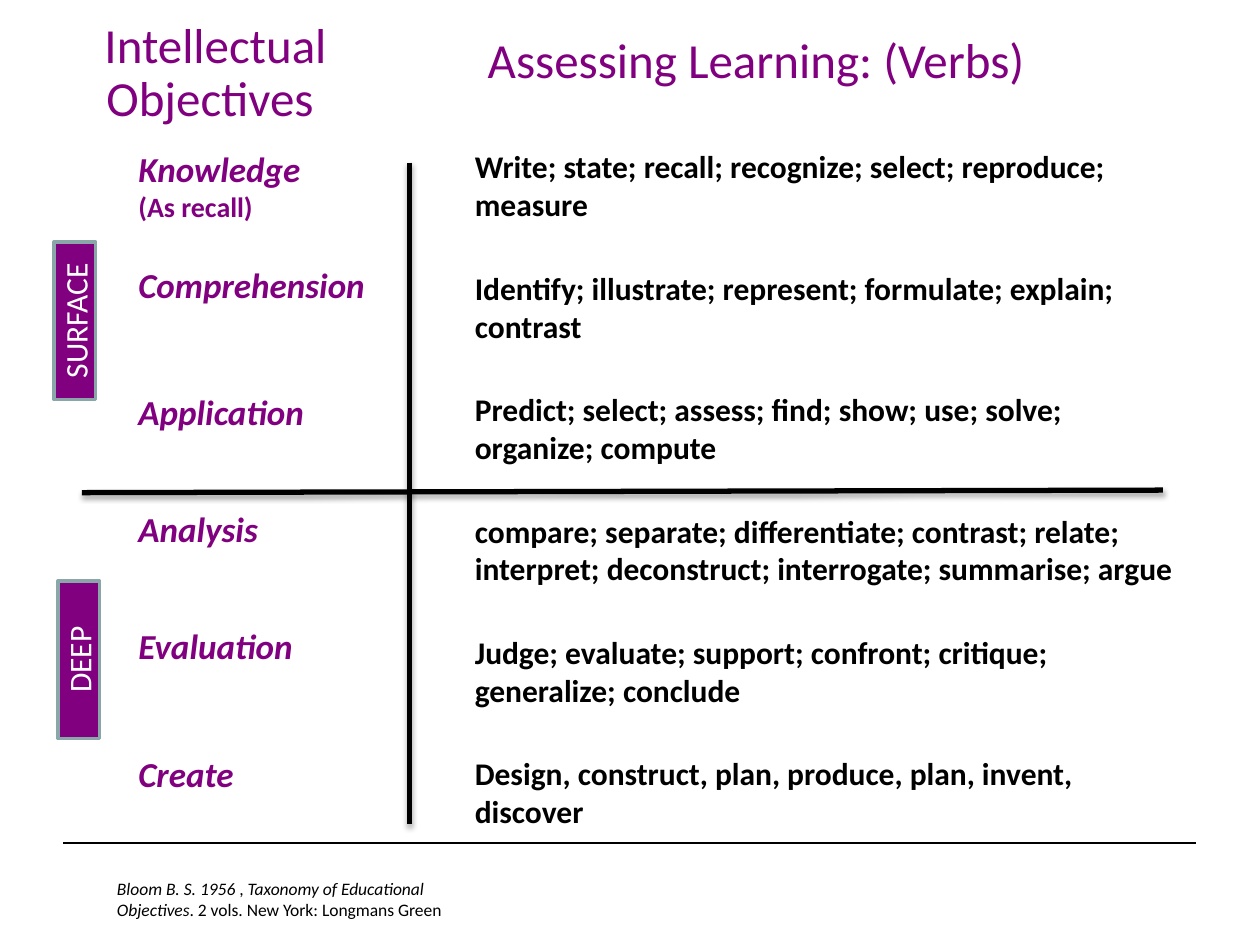
from dataclasses import dataclass

from lxml.etree import SubElement
from pptx import Presentation
from pptx.dml.color import RGBColor
from pptx.enum.shapes import MSO_CONNECTOR as Connector, MSO_SHAPE as Shape
from pptx.enum.text import MSO_ANCHOR as Anchor, PP_ALIGN as Align
from pptx.oxml.ns import qn
from pptx.util import Inches, Pt


@dataclass(frozen=True)
class Theme:
    font: str = "Calibri"
    purple: str = "800080"
    black: str = "000000"
    white: str = "FFFFFF"
    badge_edge: str = "8AA6A8"
    heading: int = 28
    objective: int = 20
    verb: int = 18
    note: int = 16
    citation: int = 10


THEME = Theme()

# Content: headings with (left, top, width, height)
HEADINGS = [
    ("Assessing Learning: (Verbs)", (3.75, 0, 4.5, 1)),
    ("Intellectual Objectives ", (0.67, 0.05, 2.08, 1.07)),
]
# Each objective: name, note, space before in points
OBJECTIVES = [
    ("Knowledge", "(As recall)", 0),
    ("Comprehension", None, 22.9),
    ("Application", None, 48.7),
    ("Analysis", None, 43),
    ("Evaluation", None, 43),
    ("Create", None, 48.7),
]
VERBS = [
    "Write; state; recall; recognize; select; reproduce; measure",
    "Identify; illustrate; represent; formulate; explain; contrast",
    "Predict; select; assess; find; show; use; solve; organize; compute",
    "compare; separate; differentiate; contrast; relate; interpret; "
    "deconstruct; interrogate; summarise; argue",
    "Judge; evaluate; support; confront; critique; generalize; conclude",
    "Design, construct, plan, produce, plan, invent, discover",
]
VERB_GAP = 26.2
CITATION = [
    ("Bloom B. S. 1956", True),
    (" , ", False),
    ("Taxonomy of Educational Objectives", True),
    (". 2 vols. New York: Longmans Green", False),
]
# Depth badges, turned to read upwards: label, left, top before turning
BADGES = [("DEEP", 0, 5.07), ("SURFACE", -0.03, 2.38)]
BADGE_SIZE = (1.25, 0.33)
# Rules: start, end, width in points, shadow
RULES = [
    ((0.5, 6.69), (9.49, 6.69), 0.75, False),
    ((3.25, 1.29), (3.25, 6.54), 3, True),
    ((0.65, 3.91), (9.23, 3.89), 3, True),
]


def style(run, size, color, bold=False, italic=False):
    font = run.font
    font.name, font.size = THEME.font, Pt(size)
    font.bold, font.italic = bold, italic
    font.color.rgb = RGBColor.from_string(color)


def add_frame(slide, box, anchor=Anchor.TOP):
    frame = slide.shapes.add_textbox(*map(Inches, box)).text_frame
    frame.word_wrap = True
    frame.vertical_anchor = anchor
    return frame


def add_line(frame, text, size, color, gap=0, **emphasis):
    first = frame.paragraphs[0]
    line = frame.add_paragraph() if first.runs else first
    line.text = text
    if gap:
        line.space_before = Pt(gap)
    style(line.runs[0], size, color, **emphasis)
    return line


def add_rule(slide, start, end, width, shadow):
    rule = slide.shapes.add_connector(
        Connector.STRAIGHT, *map(Inches, start + end))
    rule.line.color.rgb = RGBColor.from_string(THEME.black)
    rule.line.width = Pt(width)
    effects = SubElement(rule._element.spPr, qn("a:effectLst"))
    if shadow:
        cast = SubElement(effects, qn("a:outerShdw"), blurRad=str(Pt(3.1)),
                          dist=str(Pt(1.8)), dir="5400000", rotWithShape="0")
        shade = SubElement(cast, qn("a:srgbClr"), val=THEME.black)
        SubElement(shade, qn("a:alpha"), val="35000")


def add_badge(slide, label, left, top):
    badge = slide.shapes.add_shape(
        Shape.RECTANGLE, *map(Inches, (left, top, *BADGE_SIZE)))
    badge.rotation = 270
    badge.shadow.inherit = False
    badge.fill.solid()
    badge.fill.fore_color.rgb = RGBColor.from_string(THEME.purple)
    badge.line.color.rgb = RGBColor.from_string(THEME.badge_edge)
    badge.line.width = Pt(2)
    badge.text_frame.vertical_anchor = Anchor.MIDDLE
    line = add_line(badge.text_frame, label, THEME.verb, THEME.white)
    line.alignment = Align.CENTER


def main():
    deck = Presentation()
    deck.slide_width, deck.slide_height = Inches(10), Inches(7.5)
    slide = deck.slides.add_slide(deck.slide_layouts[6])

    # Headings
    for heading, box in HEADINGS:
        frame = add_frame(slide, box, Anchor.MIDDLE)
        line = add_line(frame, heading, THEME.heading, THEME.purple)
        line.alignment = Align.CENTER
        line.line_spacing = 0.9

    # Verbs column
    verbs = add_frame(slide, (3.67, 1.12, 5.75, 5.63))
    for index, text in enumerate(VERBS):
        add_line(verbs, text, THEME.verb, THEME.black,
                 gap=VERB_GAP if index else 0, bold=True)

    # Objectives column
    objectives = add_frame(slide, (1, 1.12, 2.33, 5.28))
    for name, note, gap in OBJECTIVES:
        add_line(objectives, name, THEME.objective, THEME.purple, gap,
                 bold=True, italic=True)
        if note:
            add_line(objectives, note, THEME.note, THEME.purple, bold=True)

    # Citation
    citation = add_frame(slide, (0.83, 6.92, 3.17, 0.43)).paragraphs[0]
    for text, italic in CITATION:
        run = citation.add_run()
        run.text = text
        style(run, THEME.citation, THEME.black, italic=italic)

    # Rules and depth badges
    for rule in RULES:
        add_rule(slide, *rule)
    for badge in BADGES:
        add_badge(slide, *badge)

    deck.save("out.pptx")


if __name__ == "__main__":
    main()
